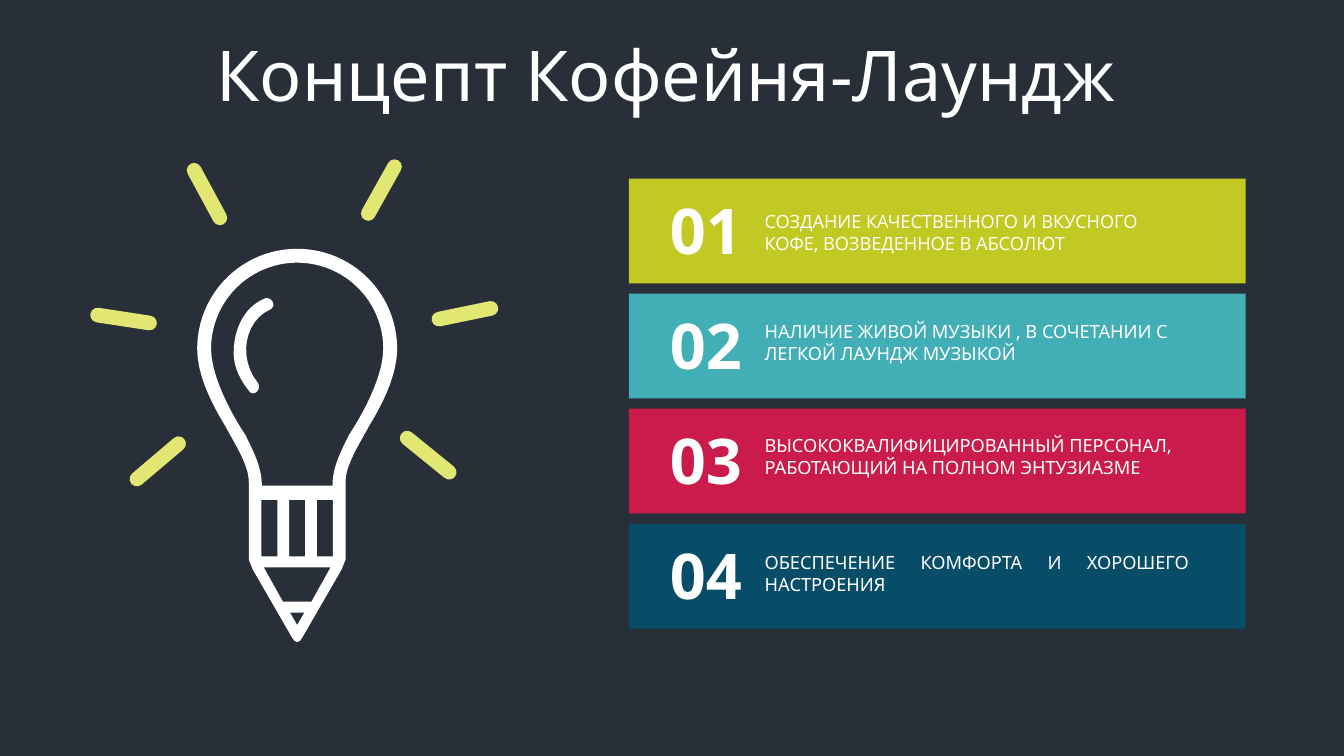
import math
from dataclasses import dataclass

import pptx
import pptx.dml.color
import pptx.enum.shapes
import pptx.enum.text
import pptx.util

Cm = pptx.util.Cm
SHAPE = pptx.enum.shapes.MSO_SHAPE
ALIGN = pptx.enum.text.PP_ALIGN


@dataclass(frozen=True)
class Theme:
    background: str = "282F39"
    white: str = "FFFFFF"
    ray: str = "E2E773"
    cards: tuple = ("C2C923", "42AFB6", "CB1B4A", "074D67")
    sans: str = "Noto Sans"
    accent_sans: str = "Open Sans"
    title_size: int = 50
    number_size: int = 45
    body_size: int = 13


class SlideBuilder:
    def __init__(self, prs, theme):
        self.theme = theme
        self.s = prs.slides.add_slide(prs.slide_layouts[6])
        self.paint(self.s.background.fill, theme.background)

    def paint(self, fill, color):
        fill.solid()
        fill.fore_color.rgb = pptx.dml.color.RGBColor.from_string(color)

    def finish(self, sp, color):
        self.paint(sp.fill, color)
        sp.line.fill.background()
        sp.shadow.inherit = False
        return sp

    def box(self, kind, x, y, w, h, color):
        sp = self.s.shapes.add_shape(kind, Cm(x), Cm(y), Cm(w), Cm(h))
        return self.finish(sp, color)

    def capsule(self, start, end, width, color):
        length = math.dist(start, end) + width
        cx, cy = ((a + b) / 2 for a, b in zip(start, end))
        sp = self.box(SHAPE.ROUNDED_RECTANGLE, cx - length / 2, cy - width / 2,
                      length, width, color)
        sp.adjustments[0] = 0.5
        sp.rotation = math.degrees(math.atan2(end[1] - start[1], end[0] - start[0]))

    def outline(self, contours, color):
        paths = [[(Cm(x), Cm(y)) for x, y in c] for c in contours]
        builder = self.s.shapes.build_freeform(*paths[0][0])
        for path_points in paths:
            builder.move_to(*path_points[0])
            builder.add_line_segments(path_points[1:], close=True)
        self.finish(builder.convert_to_shape(), color)

    def text(self, words, x, y, w, h, size, font, align=ALIGN.LEFT, bold=False):
        sp = self.s.shapes.add_textbox(Cm(x), Cm(y), Cm(w), Cm(h))
        tf = sp.text_frame
        tf.word_wrap = True
        tf.auto_size = pptx.enum.text.MSO_AUTO_SIZE.SHAPE_TO_FIT_TEXT
        p = tf.paragraphs[0]
        p.alignment = align
        r = p.add_run()
        r.text = words
        r.font.name = font
        r.font.size = pptx.util.Pt(size)
        r.font.bold = bold
        self.paint(r.font.fill, self.theme.white)


def curve(points, steps=12):
    result = [points[0]]
    for i in range(0, len(points) - 1, 3):
        a, b, c, d = points[i:i + 4]
        for n in range(1, steps + 1):
            t = n / steps
            u = 1 - t
            weights = (u**3, 3 * u * u * t, 3 * u * t * t, t**3)
            result.append(tuple(sum(w * q[k] for w, q in zip(weights, (a, b, c, d)))
                                for k in (0, 1)))
    return result


def dome(radius, center_y, steps=24):
    angles = [math.pi / 2 * n / steps for n in range(steps)]
    return [(radius * math.sin(a), center_y - radius * math.cos(a)) for a in angles]


def mirrored(half, axis):
    right = [(axis + x, y) for x, y in half]
    left = [(axis - x, y) for x, y in reversed(half) if x]
    return right + left


def bulb_contours():
    axis, center_y = 7.49, 8.79
    glass = dome(2.52, center_y) + curve([
        (2.52, 8.79), (2.52, 9.7), (1.83, 10.67), (1.75, 10.85),
        (1.42, 11.43), (1.22, 11.8), (1.22, 12.14)])
    tip = [(1.22, 14.1), (1.12, 14.35), (0.15, 16.03), (0.07, 16.15), (0, 16.18)]
    inside = dome(2.17, center_y) + curve([
        (2.17, 8.79), (2.17, 9.7), (1.3, 10.97), (1.3, 10.97),
        (1.12, 11.35), (0.89, 11.75), (0.89, 12.24)])
    wood = [(0.84, 14.3), (0.36, 15.16)]
    lead = [(0.18, 15.44), (0, 15.75)]
    contours = [mirrored(half, axis) for half in (glass + tip, inside, wood, lead)]
    slot = [(0.2, 12.6), (0.2, 14.02)]
    return contours + [mirrored(slot, axis + 0.7 * n) for n in (-1, 0, 1)]


RAYS = [
    ((4.5, 11.18), (3.45, 12.07)),
    ((9.94, 4.2), (9.28, 5.38)),
    ((4.89, 4.29), (5.54, 5.49)),
    ((10.26, 11.04), (11.32, 11.9)),
    ((12.37, 7.77), (11.06, 8.04)),
    ((2.46, 7.94), (3.77, 8.14)),
]
GLINT = [
    (5.89, 8.89), (5.89, 8.28), (6.17, 7.72), (6.68, 7.52),
    (6.83, 7.47), (6.99, 7.7), (6.81, 7.8),
    (6.17, 8.08), (5.99, 9.02), (6.5, 9.65),
    (6.6, 9.83), (6.4, 9.98), (6.3, 9.88),
    (6.07, 9.6), (5.89, 9.27), (5.89, 8.89),
]


def main():
    prs = pptx.Presentation()
    prs.slide_width, prs.slide_height = Cm(33.87), Cm(19.05)
    theme = Theme()
    slide = SlideBuilder(prs, theme)
    slide.text("Концепт Кофейня-Лаундж", 3.35, 0.66, 26.87, 2.39,
               theme.title_size, theme.sans, ALIGN.CENTER)

    for start, end in RAYS:
        slide.capsule(start, end, 0.37, theme.ray)
    slide.outline([curve(GLINT)], theme.white)
    slide.outline(bulb_contours(), theme.white)

    goals = [
        ("СОЗДАНИЕ КАЧЕСТВЕННОГО И ВКУСНОГО КОФЕ, ВОЗВЕДЕННОЕ В АБСОЛЮТ",
         5.18, theme.accent_sans, ALIGN.LEFT),
        ("НАЛИЧИЕ ЖИВОЙ МУЗЫКИ , В СОЧЕТАНИИ С ЛЕГКОЙ ЛАУНДЖ МУЗЫКОЙ",
         7.95, theme.sans, ALIGN.LEFT),
        ("ВЫСОКОКВАЛИФИЦИРОВАННЫЙ ПЕРСОНАЛ, РАБОТАЮЩИЙ НА ПОЛНОМ ЭНТУЗИАЗМЕ",
         10.82, theme.sans, ALIGN.LEFT),
        ("ОБЕСПЕЧЕНИЕ КОМФОРТА И ХОРОШЕГО НАСТРОЕНИЯ",
         13.77, theme.sans, ALIGN.JUSTIFY),
    ]
    for i, (words, text_top, font, align) in enumerate(goals):
        top = 4.5 + 2.9 * i
        slide.box(SHAPE.RECTANGLE, 15.85, top, 15.54, 2.64, theme.cards[i])
        slide.text(f"{i + 1:02}", 16.15, top + 0.2, 3.28, 2.18,
                   theme.number_size, theme.accent_sans, ALIGN.CENTER, True)
        slide.text(words, 19.02, text_top, 11.18, 1.37, theme.body_size, font, align)

    prs.save("out.pptx")


if __name__ == "__main__":
    main()
